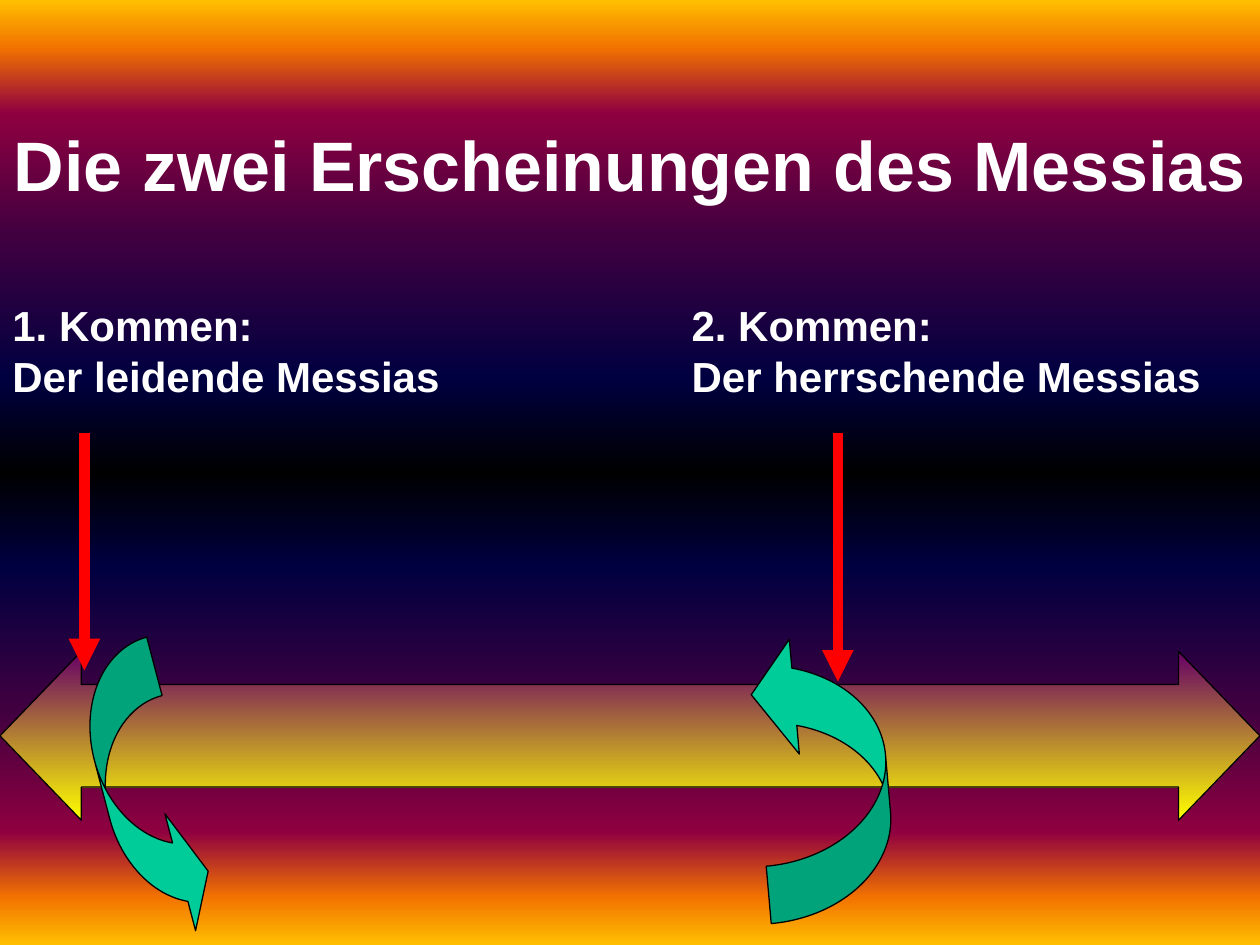
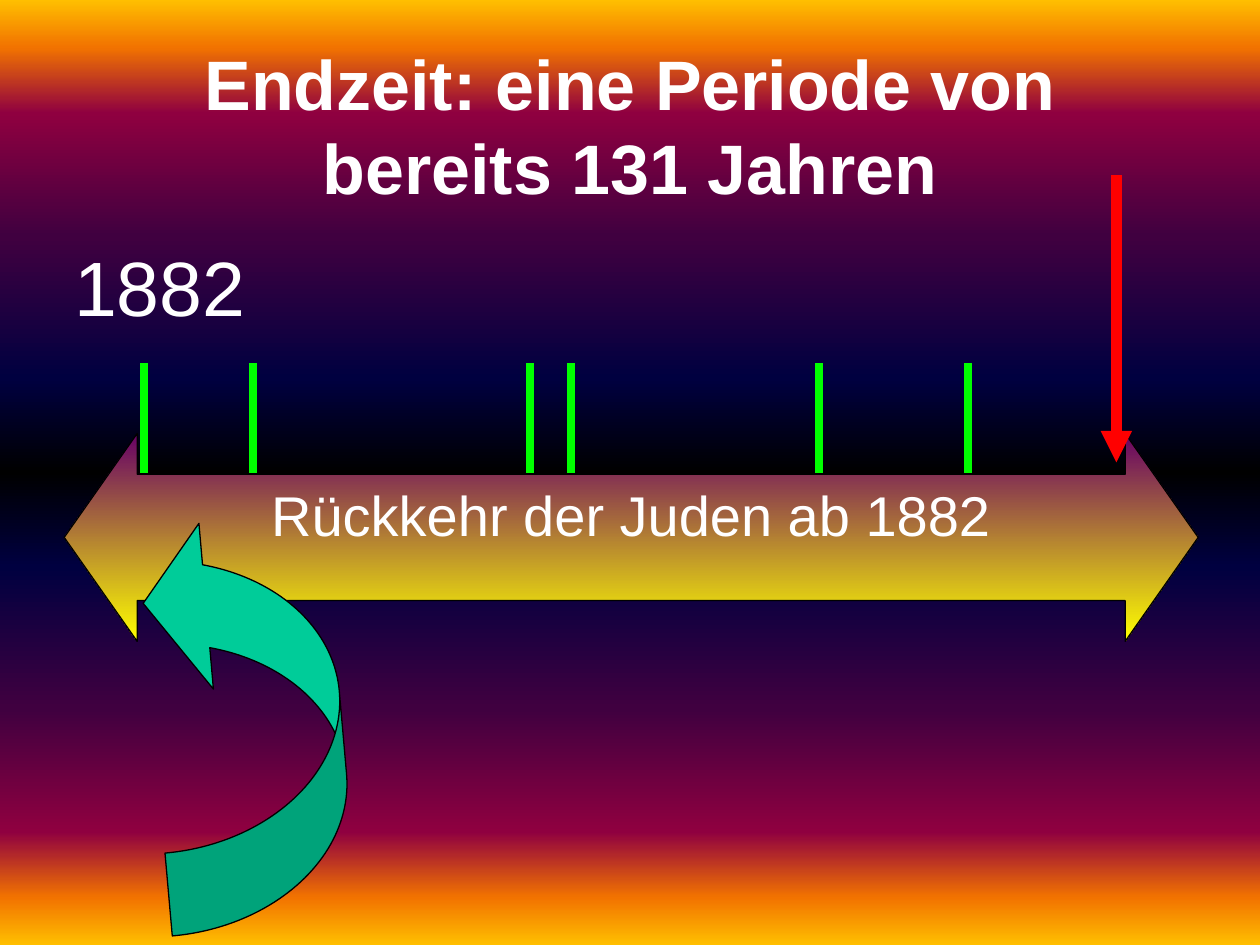
from lxml.etree import SubElement
from pptx import Presentation
from pptx.dml.color import RGBColor
from pptx.enum.shapes import MSO_CONNECTOR, MSO_SHAPE
from pptx.enum.text import MSO_ANCHOR, MSO_AUTO_SIZE, PP_ALIGN
from pptx.oxml.ns import qn
from pptx.util import Inches, Pt

COLORS = {
    "text": "FFFFFF",
    "outline": "000000",
    "pointer": "FF0000",
    "tick": "00FF00",
    "curve": "00CC99",
}
SUNSET_HALF = [(0, "FFBF00"), (5, "F27300"), (12, "8F0040"), (25, "400040"), (40, "000040")]
SUNSET = SUNSET_HALF + [(50, "000000")] + [(100 - at, color) for at, color in reversed(SUNSET_HALF)]
TIMELINE = [(0, "660066"), (100, "FFFF00")]


class Deck:
    """Holds the shared style and the current slide, and draws each kind of element."""

    font = "Arial"

    def __init__(self):
        self.prs = Presentation()
        self.prs.slide_width, self.prs.slide_height = Inches(10), Inches(7.5)
        self.slide = None

    def color(self, name):
        return RGBColor.from_string(COLORS[name])

    def gradient(self, fill, element, stops):
        fill.gradient()
        fill.gradient_angle = 270
        stop_list = element.find(".//" + qn("a:gsLst"))
        stop_list.clear()
        for at, color in stops:
            stop = SubElement(stop_list, qn("a:gs"), pos=str(at * 1000))
            SubElement(stop, qn("a:srgbClr"), val=color)

    def new_slide(self):
        self.slide = self.prs.slides.add_slide(self.prs.slide_layouts[6])
        self.gradient(self.slide.background.fill, self.slide.element, SUNSET)

    def set_text(self, frame, lines, size, bold=False, align=PP_ALIGN.LEFT):
        frame.text = "\n".join(lines)
        for paragraph in frame.paragraphs:
            paragraph.alignment = align
            paragraph.font.name = self.font
            paragraph.font.size = Pt(size)
            paragraph.font.bold = bold
            paragraph.font.color.rgb = self.color("text")

    def label(self, box, lines, size, bold=False, wrap=True):
        frame = self.slide.shapes.add_textbox(*map(Inches, box)).text_frame
        frame.word_wrap = wrap
        frame.auto_size = MSO_AUTO_SIZE.SHAPE_TO_FIT_TEXT
        self.set_text(frame, lines, size, bold)

    def title(self, box, text):
        frame = self.slide.shapes.add_textbox(*map(Inches, box)).text_frame
        frame.word_wrap = True
        frame.vertical_anchor = MSO_ANCHOR.MIDDLE
        self.set_text(frame, [text], 40, True, PP_ALIGN.CENTER)

    def outlined(self, kind, box, adjustments):
        shape = self.slide.shapes.add_shape(kind, *map(Inches, box))
        for index, value in enumerate(adjustments):
            shape.adjustments[index] = value
        shape.shadow.inherit = False
        shape.line.color.rgb = self.color("outline")
        shape.line.width = Pt(0.75)
        return shape

    def timeline(self, box, head, text=None):
        arrow = self.outlined(MSO_SHAPE.LEFT_RIGHT_ARROW, box, (0.608, head))
        self.gradient(arrow.fill, arrow.element, TIMELINE)
        if text:
            arrow.text_frame.word_wrap = True
            arrow.text_frame.vertical_anchor = MSO_ANCHOR.TOP
            self.set_text(arrow.text_frame, [text], 32, align=PP_ALIGN.CENTER)

    def curve(self, kind, box, thickness, rotation, flipped=False):
        arrow = self.outlined(kind, box, (thickness, 2 * thickness, 0.333))
        arrow.fill.solid()
        arrow.fill.fore_color.rgb = self.color("curve")
        arrow.rotation = rotation
        if flipped:
            arrow.element.spPr.xfrm.set("flipV", "1")

    def vertical(self, x, top, bottom, color, width, arrow=False):
        line = self.slide.shapes.add_connector(
            MSO_CONNECTOR.STRAIGHT, Inches(x), Inches(top), Inches(x), Inches(bottom))
        line.line.color.rgb = self.color(color)
        line.line.width = Pt(width)
        properties = line.element.spPr
        if arrow:
            SubElement(properties.find(qn("a:ln")), qn("a:tailEnd"), type="triangle")
        SubElement(properties, qn("a:effectLst"))

    def pointer(self, x, top, bottom):
        self.vertical(x, top, bottom, "pointer", 6, arrow=True)


def two_comings(deck):
    deck.new_slide()
    deck.timeline((0, 5.17, 10, 1.34), 0.482)
    deck.pointer(0.67, 3.44, 5.32)
    deck.pointer(6.65, 3.44, 5.41)
    deck.label((0, 2.33, 4.45, 0.9), ["1. Kommen:", "Der leidende Messias"], 24, True)
    deck.label((5.39, 2.33, 4.61, 0.9), ["2. Kommen:", "Der herrschende Messias"], 24, True)
    deck.title((0, 0.67, 10, 1.25), "Die zwei Erscheinungen des Messias")
    deck.curve(MSO_SHAPE.CURVED_RIGHT_ARROW, (0.83, 5.1, 0.65, 2.4), 0.738, 345.3)
    deck.curve(MSO_SHAPE.CURVED_LEFT_ARROW, (6.02, 5.01, 1.02, 2.28), 0.448, 355, True)


def end_time(deck):
    deck.new_slide()
    deck.title((0.75, 0.21, 8.5, 1.55), "Endzeit: eine Periode von bereits 131 Jahren")
    deck.timeline((0.51, 3.44, 9, 1.65), 0.351, "Rückkehr der Juden ab 1882")
    deck.curve(MSO_SHAPE.CURVED_LEFT_ARROW, (1.22, 4.06, 1.49, 3.31), 0.443, 355, True)
    deck.pointer(8.86, 1.39, 3.67)
    for event_x in (1.14, 2.01, 4.21, 4.53, 6.5, 7.68):
        deck.vertical(event_x, 2.88, 3.75, "tick", 4.5)
    deck.label((0.49, 1.85, 1.56, 0.83), ["1882"], 44, wrap=False)


def main():
    deck = Deck()
    two_comings(deck)
    end_time(deck)
    deck.prs.save("out.pptx")


if __name__ == "__main__":
    main()
